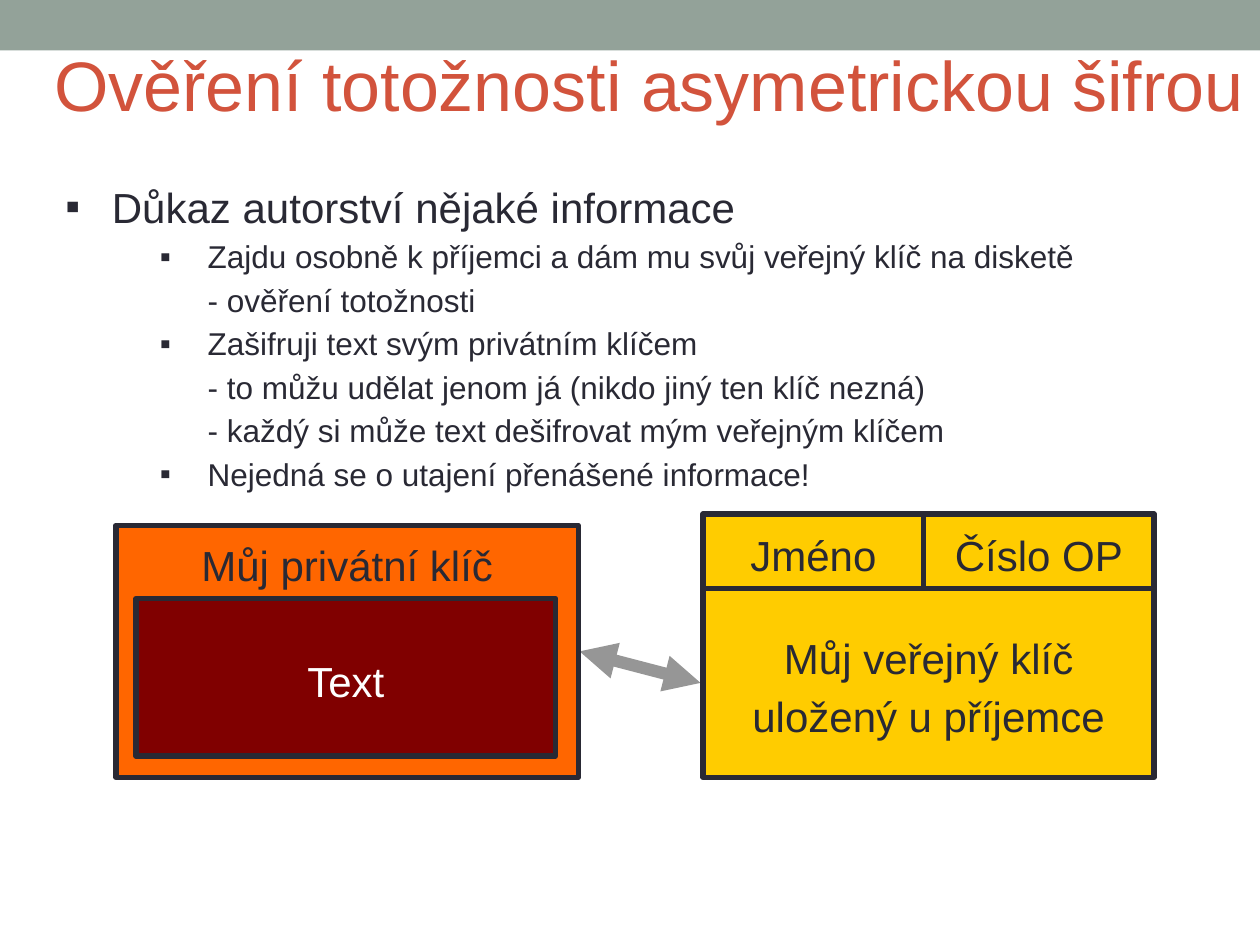
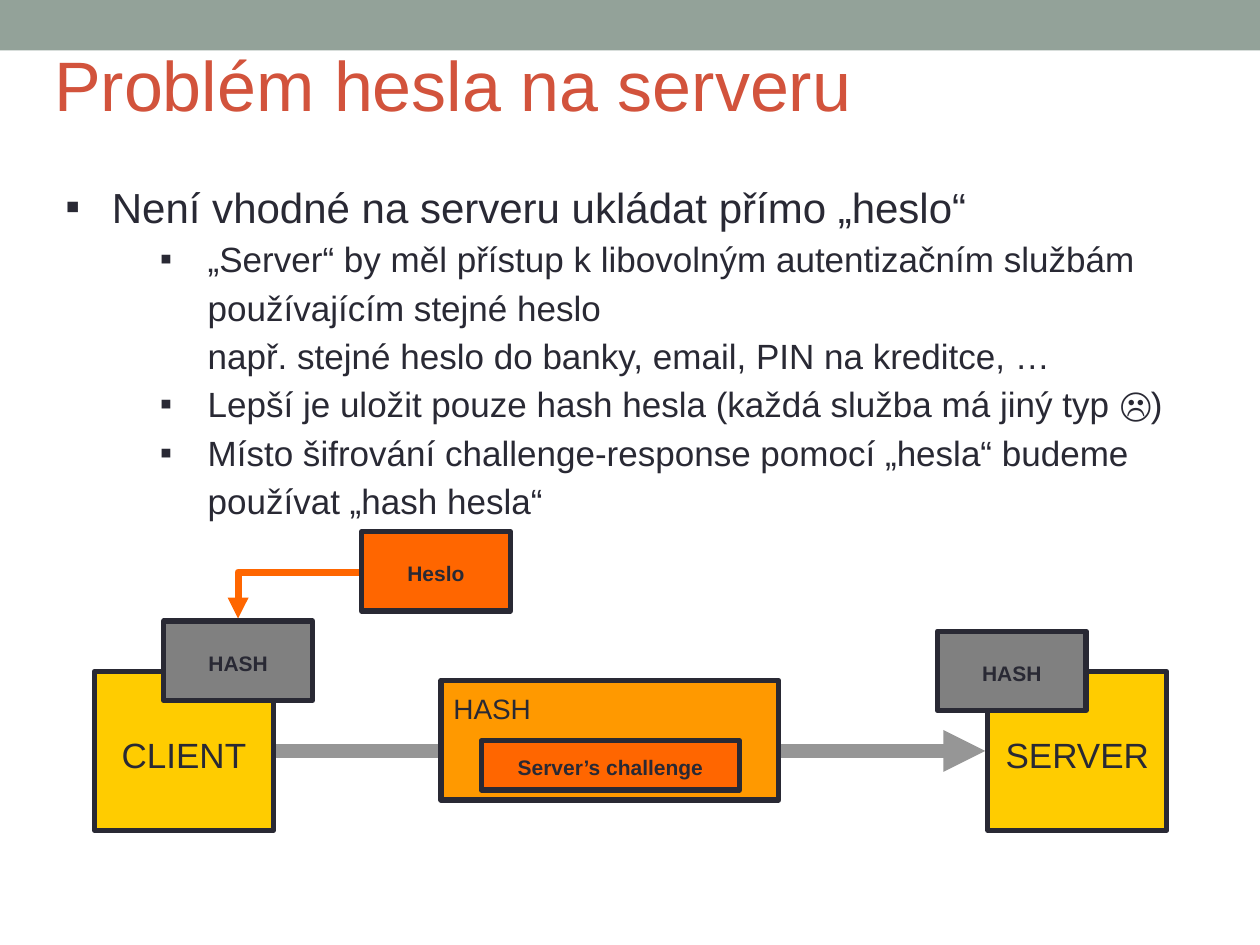
from lxml import etree
from pptx import Presentation
from pptx.dml.color import RGBColor
from pptx.enum.shapes import MSO_CONNECTOR, MSO_SHAPE
from pptx.enum.text import MSO_ANCHOR, MSO_AUTO_SIZE, PP_ALIGN
from pptx.oxml.ns import qn
from pptx.util import Inches, Pt

RECTANGLE = MSO_SHAPE.RECTANGLE
STRAIGHT, ELBOW = MSO_CONNECTOR.STRAIGHT, MSO_CONNECTOR.ELBOW
TOP, MIDDLE = MSO_ANCHOR.TOP, MSO_ANCHOR.MIDDLE
LEFT, CENTER = PP_ALIGN.LEFT, PP_ALIGN.CENTER
FIXED = MSO_AUTO_SIZE.NONE

FONT = "Arial"
LINE_SPACING = 1.15
COLORS = {
    "band": "93A299", "title": "D2533C", "ink": "292934", "white": "FFFFFF",
    "orange": "FF6600", "amber": "FF9900", "yellow": "FFCC00",
    "maroon": "800000", "gray": "808080", "arrow": "969696",
}

NODE_TOP, NODE_SIZE = 5.33, (1.42, 1.26)
TAG_SIZE = (1.18, 0.63)
FLOW_Y = NODE_TOP + NODE_SIZE[1] / 2

CARD_LEFT, CARD_TOP, CARD_WIDTH = 5.58, 4.08, 3.58
HEAD_HEIGHT, NAME_WIDTH = 0.59, 1.75

LARGE = {"size": 24}
NODE = {"size": 20, "fill": "yellow"}
TAG = {"size": 12, "bold": True}

SLIDES = [
    {
        "title": "Ověření totožnosti asymetrickou šifrou",
        "heading": "Důkaz autorství nějaké informace",
        "point_size": 18,
        "body_height": 2.52,
        "points": [
            ["Zajdu osobně k příjemci a dám mu svůj veřejný klíč na disketě",
             "- ověření totožnosti"],
            ["Zašifruji text svým privátním klíčem",
             "- to můžu udělat jenom já (nikdo jiný ten klíč nezná)",
             "- každý si může text dešifrovat mým veřejným klíčem"],
            ["Nejedná se o utajení přenášené informace!"],
        ],
        "arrows": [
            (STRAIGHT, (5.56, 5.42), (4.6, 5.17), "arrow", 7, ("headEnd", "tailEnd")),
        ],
        "boxes": [
            ("Můj privátní klíč", (0.92, 4.17), (3.67, 2),
             {**LARGE, "fill": "orange", "anchor": TOP}),
            ("Text", (1.08, 4.75), (3.33, 1.25),
             {**LARGE, "fill": "maroon", "color": "white"}),
            ("Můj veřejný klíč uložený u příjemce",
             (CARD_LEFT, CARD_TOP + HEAD_HEIGHT), (CARD_WIDTH, 1.5),
             {**LARGE, "fill": "yellow"}),
            ("Jméno", (CARD_LEFT, CARD_TOP), (NAME_WIDTH, HEAD_HEIGHT),
             {**LARGE, "fill": "yellow"}),
            ("Číslo OP", (CARD_LEFT + NAME_WIDTH, CARD_TOP),
             (CARD_WIDTH - NAME_WIDTH, HEAD_HEIGHT), {**LARGE, "fill": "yellow"}),
        ],
    },
    {
        "title": "Problém hesla na serveru",
        "heading": "Není vhodné na serveru ukládat přímo „heslo“",
        "point_size": 20,
        "body_height": 2.74,
        "points": [
            ["„Server“ by měl přístup k libovolným autentizačním službám "
             "používajícím stejné heslo",
             "např. stejné heslo do banky, email, PIN na kreditce, …"],
            ["Lepší je uložit pouze hash hesla (každá služba má jiný typ ☹)"],
            ["Místo šifrování challenge-response pomocí „hesla“ budeme "
             "používat „hash hesla“"],
        ],
        "arrows": [
            (STRAIGHT, (2.19, FLOW_Y), (7.82, FLOW_Y), "arrow", 8, ("tailEnd",)),
            (ELBOW, (2.85, 4.54), (1.89, 4.91), "orange", 4, ("tailEnd",)),
        ],
        "boxes": [
            ("SERVER", (7.84, NODE_TOP), NODE_SIZE, NODE),
            ("CLIENT", (0.75, NODE_TOP), NODE_SIZE, NODE),
            ("HASH", (3.5, 5.4), (2.68, 0.95),
             {"size": 16, "fill": "amber", "anchor": TOP, "align": LEFT}),
            ("Server’s challenge", (3.82, 5.88), (2.05, 0.39),
             {**TAG, "fill": "orange"}),
            ("Heslo", (2.87, 4.22), TAG_SIZE, {**TAG, "fill": "orange"}),
            ("HASH", (7.44, 5.01), TAG_SIZE, {**TAG, "fill": "gray"}),
            ("HASH", (1.3, 4.93), TAG_SIZE, {**TAG, "fill": "gray"}),
        ],
    },
]


def rgb(name):
    return RGBColor.from_string(COLORS[name])


def add_span(para, text, size, color="ink", bold=False):
    span = para.add_run()
    span.text = text
    span.font.name = FONT
    span.font.size = Pt(size)
    span.font.bold = bold
    span.font.color.rgb = rgb(color)


def add_rectangle(page, at, size, fill):
    box = page.shapes.add_shape(RECTANGLE, *map(Inches, at + size))
    box.shadow.inherit = False
    box.fill.solid()
    box.fill.fore_color.rgb = rgb(fill)
    return box


def add_master_band(deck, page):
    band = add_rectangle(page, (0, 0), (10, 0.4), "band")
    band.line.fill.background()
    band.element.nvSpPr.cNvPr.set("id", "99")
    deck.slide_master.shapes.element.insert(2, band.element)


def set_title(page, text):
    title = page.shapes.title
    title.left, title.top = Inches(0.33), Inches(0.28)
    title.width, title.height = Inches(9.67), Inches(0.77)
    frame = title.text_frame
    frame.auto_size = FIXED
    frame.word_wrap = True
    frame.vertical_anchor = TOP
    para = frame.paragraphs[0]
    para.alignment = LEFT
    add_span(para, text, 40, "title")


def add_bullet(para, lines, size, level, margin, indent):
    para.level = level
    para.line_spacing = LINE_SPACING
    props = para._p.get_or_add_pPr()
    props.set("marL", str(Inches(margin)))
    props.set("indent", str(Inches(indent)))
    etree.SubElement(props, qn("a:buFont")).set("typeface", FONT)
    etree.SubElement(props, qn("a:buChar")).set("char", "▪")
    for index, line in enumerate(lines):
        if index:
            para.add_line_break()
        add_span(para, line, size)


def add_body(page, content):
    box = page.shapes.add_textbox(
        *map(Inches, (0.42, 1.33, 9.17, content["body_height"])))
    frame = box.text_frame
    frame.word_wrap = True
    add_bullet(frame.paragraphs[0], [content["heading"]], 24, 0, 0.37, -0.37)
    for lines in content["points"]:
        add_bullet(frame.add_paragraph(), lines, content["point_size"], 1, 1.13, -0.38)


def add_arrow(page, kind, start, end, color, width, ends):
    arrow = page.shapes.add_connector(kind, *map(Inches, start + end))
    arrow.line.color.rgb = rgb(color)
    arrow.line.width = Pt(width)
    props = arrow.element.spPr
    if kind == ELBOW:
        props.find(qn("a:prstGeom")).set("prst", "bentConnector2")
    line = props.find(qn("a:ln"))
    for end_name in ends:
        etree.SubElement(line, qn("a:" + end_name)).set("type", "triangle")
    etree.SubElement(props, qn("a:effectLst"))


def add_box(page, text, at, size, style):
    box = add_rectangle(page, at, size, style["fill"])
    box.line.color.rgb = rgb("ink")
    box.line.width = Pt(3)
    frame = box.text_frame
    frame.word_wrap = True
    frame.vertical_anchor = style.get("anchor", MIDDLE)
    para = frame.paragraphs[0]
    para.alignment = style.get("align", CENTER)
    para.line_spacing = LINE_SPACING
    space = etree.SubElement(para._p.get_or_add_pPr(), qn("a:spcBef"))
    etree.SubElement(space, qn("a:spcPct")).set("val", "50000")
    add_span(para, text, style["size"], style.get("color", "ink"), style.get("bold", False))


def main():
    deck = Presentation()
    deck.slide_width, deck.slide_height = Inches(10), Inches(7.5)
    for number, content in enumerate(SLIDES):
        page = deck.slides.add_slide(deck.slide_layouts[5])
        if number == 0:
            add_master_band(deck, page)
        set_title(page, content["title"])
        add_body(page, content)
        for arrow in content["arrows"]:
            add_arrow(page, *arrow)
        for box in content["boxes"]:
            add_box(page, *box)
    deck.save("out.pptx")


if __name__ == "__main__":
    main()
